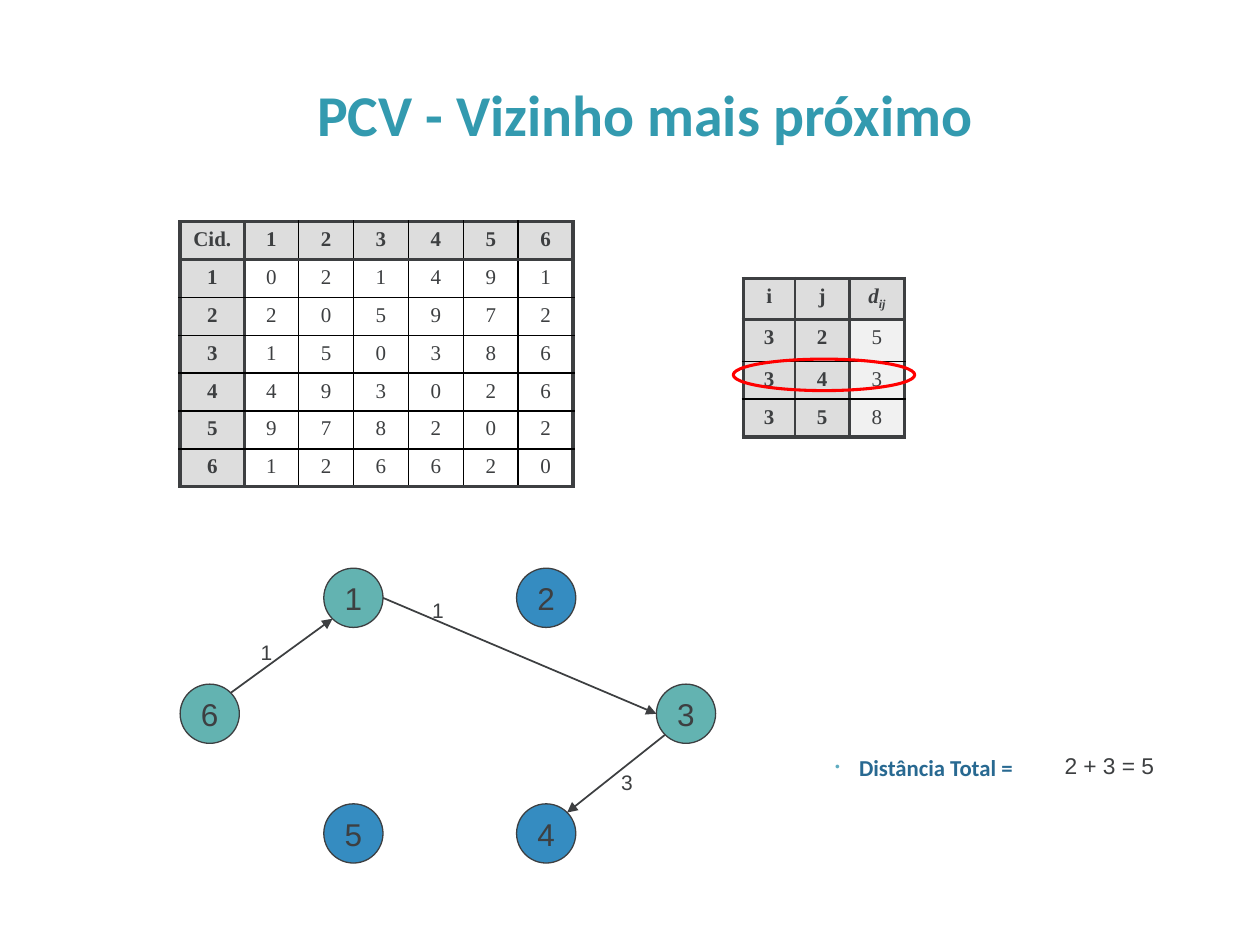
from dataclasses import dataclass
from math import cos, radians, sin

from lxml.etree import SubElement
from pptx import Presentation
from pptx.dml.color import RGBColor
from pptx.enum.shapes import MSO_CONNECTOR, MSO_SHAPE
from pptx.enum.text import MSO_ANCHOR as ANCHOR, MSO_AUTO_SIZE as AUTO, PP_ALIGN as ALIGN
from pptx.oxml.ns import qn
from pptx.util import Inches, Pt


@dataclass(frozen=True)
class Theme:
    title: str = "339AAF"
    total: str = "286991"
    bullet: str = "5FACC0"
    ink: str = "3D3F41"
    grid: str = "000000"
    header: str = "DDDDDD"
    value: str = "F1F1F1"
    visited: str = "63B3B1"
    pending: str = "358CC1"
    mark: str = "FF0000"
    heading_font: str = "Calibri"
    body_font: str = "Arial"
    table_font: str = "Times New Roman"
    title_size: float = 33
    node_size: float = 18
    total_size: float = 13
    small_size: float = 12
    thick: float = 2.25
    thin: float = 1


T = Theme()
rgb = RGBColor.from_string


def add_run(p, text, size=T.small_size, font=T.body_font, color=T.ink,
            bold=False, italic=False, baseline=None):
    r = p.add_run()
    r.text = text
    f = r.font
    f.size, f.name, f.bold, f.italic = Pt(size), font, bold, italic
    f.color.rgb = rgb(color)
    if baseline:
        r.font._element.set("baseline", str(baseline))


def write(tf, text, align=ALIGN.CENTER, anchor=ANCHOR.TOP, wrap=True, spacing=None, **fmt):
    tf.word_wrap, tf.vertical_anchor = wrap, anchor
    p = tf.paragraphs[0]
    p.alignment = align
    if spacing:
        p.line_spacing = spacing
    add_run(p, text, **fmt)
    return p


def add_text(s, box, text, grow=False, **fmt):
    tf = s.shapes.add_textbox(*map(Inches, box)).text_frame
    p = write(tf, text, **fmt)
    if grow:
        tf.auto_size = AUTO.SHAPE_TO_FIT_TEXT
    return p


def add_ellipse(s, box, line, width, fill=None):
    sp = s.shapes.add_shape(MSO_SHAPE.OVAL, *map(Inches, box))
    sp.shadow.inherit = False
    if fill:
        sp.fill.solid()
        sp.fill.fore_color.rgb = rgb(fill)
    else:
        sp.fill.background()
    sp.line.color.rgb, sp.line.width = rgb(line), Pt(width)
    return sp


def set_border(cell, side, color, width):
    ln = SubElement(cell._tc.get_or_add_tcPr(), qn(f"a:ln{side}"), w=str(Pt(width)))
    SubElement(SubElement(ln, qn("a:solidFill")), qn("a:srgbClr"), val=color)


def add_grid(s, box, rows, widths, heights, header_cols, value_fill=None, column_line=T.grid):
    """Table with thick lines around it, under its header row and after its header columns."""
    n_rows, n_cols = len(rows), len(widths)
    table = s.shapes.add_table(n_rows, n_cols, *map(Inches, box)).table
    table.first_row = table.horz_banding = False
    for col, width in zip(table.columns, widths):
        col.width = Inches(width)
    for row, height in zip(table.rows, heights):
        row.height = Inches(height)

    def edge(index, header, last, thin_color):
        return (T.ink, T.thick) if index in (0, header, last) else (thin_color, T.thin)

    for i, row in enumerate(rows):
        for j, text in enumerate(row):
            cell = table.cell(i, j)
            for side, k in (("L", j), ("R", j + 1)):
                set_border(cell, side, *edge(k, header_cols, n_cols, column_line))
            for side, k in (("T", i), ("B", i + 1)):
                set_border(cell, side, *edge(k, 1, n_rows, T.grid))
            is_header = i == 0 or j < header_cols
            fill = T.header if is_header else value_fill
            if fill:
                cell.fill.solid()
                cell.fill.fore_color.rgb = rgb(fill)
            else:
                cell.fill.background()
            p = cell.text_frame.paragraphs[0]
            p.alignment = ALIGN.CENTER
            name, _, index = text.partition("_")
            fmt = dict(font=T.table_font, bold=is_header, italic=bool(index))
            add_run(p, name, **fmt)
            if index:
                add_run(p, index, baseline=-25000, **fmt)


def add_distances(s, box):
    distances = ["021491", "205972", "150386", "493026", "978202", "126620"]
    rows = [["Cid.", *"123456"]]
    rows += [[str(city), *line] for city, line in enumerate(distances, 1)]
    add_grid(s, box, rows, [0.51, 0.43] + [0.436] * 5, [0.3] * 7, header_cols=1)


def add_candidates(s, box):
    x, y, w, _ = box
    heights = [0.31, 0.33, 0.3, 0.3]
    add_grid(s, box, [["i", "j", "d_ij"], "325", "343", "358"], [0.41, 0.43, 0.44],
             heights, header_cols=2, value_fill=T.value, column_line=T.ink)
    add_ellipse(s, (x - 0.08, y + sum(heights[:2]), w + 0.16, 0.25), T.mark, 1.75)


def add_arrow(s, start, end):
    c = s.shapes.add_connector(MSO_CONNECTOR.STRAIGHT, *map(Inches, (*start, *end)))
    c.line.color.rgb, c.line.width = rgb(T.ink), Pt(T.thin)
    SubElement(c.line._get_or_add_ln(), qn("a:tailEnd"), type="triangle")
    SubElement(c._element.spPr, qn("a:effectLst"))


def add_route(s, box):
    """Cities as circles, joined by the arrows of the route so far."""
    x, y, w, h = box
    d = 0.47
    left, right = x + 1.14, x + 2.67
    middle, bottom = y + 0.92, y + h - d
    nodes = {"1": (left, y), "2": (right, y), "3": (x + w - d, middle),
             "4": (right, bottom), "5": (left, bottom), "6": (x, middle)}
    for city, corner in nodes.items():
        sp = add_ellipse(s, (*corner, d, d), T.ink, 0.75,
                         T.visited if city in "613" else T.pending)
        write(sp.text_frame, city, anchor=ANCHOR.MIDDLE, wrap=False, size=T.node_size)

    def rim(city, angle):
        cx, cy = (v + d / 2 for v in nodes[city])
        return cx + d / 2 * cos(radians(angle)), cy - d / 2 * sin(radians(angle))

    legs = [("6", 45, "1", 225, "1", 0.54, 0.52),
            ("1", 0, "3", 180, "1", 1.9, 0.18),
            ("3", 225, "4", 45, "3", 3.4, 1.55)]
    for a, a_angle, b, b_angle, cost, dx, dy in legs:
        add_arrow(s, rim(a, a_angle), rim(b, b_angle))
        add_text(s, (x + dx, y + dy, 0.29, 0.3), cost, grow=True, wrap=False)


def add_total(s, box):
    x, y, w, h = box
    p = add_text(s, (x, y, 2.11, h), "Distância Total =", align=ALIGN.JUSTIFY, spacing=1.1,
                 size=T.total_size, font=T.heading_font, color=T.total, bold=True)
    pPr = p._p.get_or_add_pPr()
    pPr.set("marL", str(Inches(0.19)))
    pPr.set("indent", str(-Inches(0.19)))
    SubElement(SubElement(pPr, qn("a:buClr")), qn("a:srgbClr"), val=T.bullet)
    SubElement(pPr, qn("a:buSzPct"), val="60000")
    SubElement(pPr, qn("a:buFont"), typeface=T.body_font)
    SubElement(pPr, qn("a:buChar"), char="•")
    add_text(s, (x + w - 0.95, y + 0.01, 0.95, 0.32), "2 + 3 = 5", grow=True,
             align=ALIGN.LEFT, size=T.total_size)


def main():
    prs = Presentation()
    prs.slide_width, prs.slide_height = Inches(10), Inches(7.5)
    s = prs.slides.add_slide(prs.slide_layouts[6])
    add_text(s, (1.16, 0.61, 7.92, 0.62), "PCV - Vizinho mais próximo", anchor=ANCHOR.BOTTOM,
             spacing=0.9, size=T.title_size, font=T.heading_font, color=T.title, bold=True)
    add_distances(s, (1.43, 1.76, 3.12, 2.1))
    add_candidates(s, (5.9, 2.21, 1.28, 1.24))
    add_route(s, (1.43, 4.51, 4.25, 2.34))
    add_total(s, (6.53, 5.91, 2.77, 0.43))
    prs.save("out.pptx")


if __name__ == "__main__":
    main()
